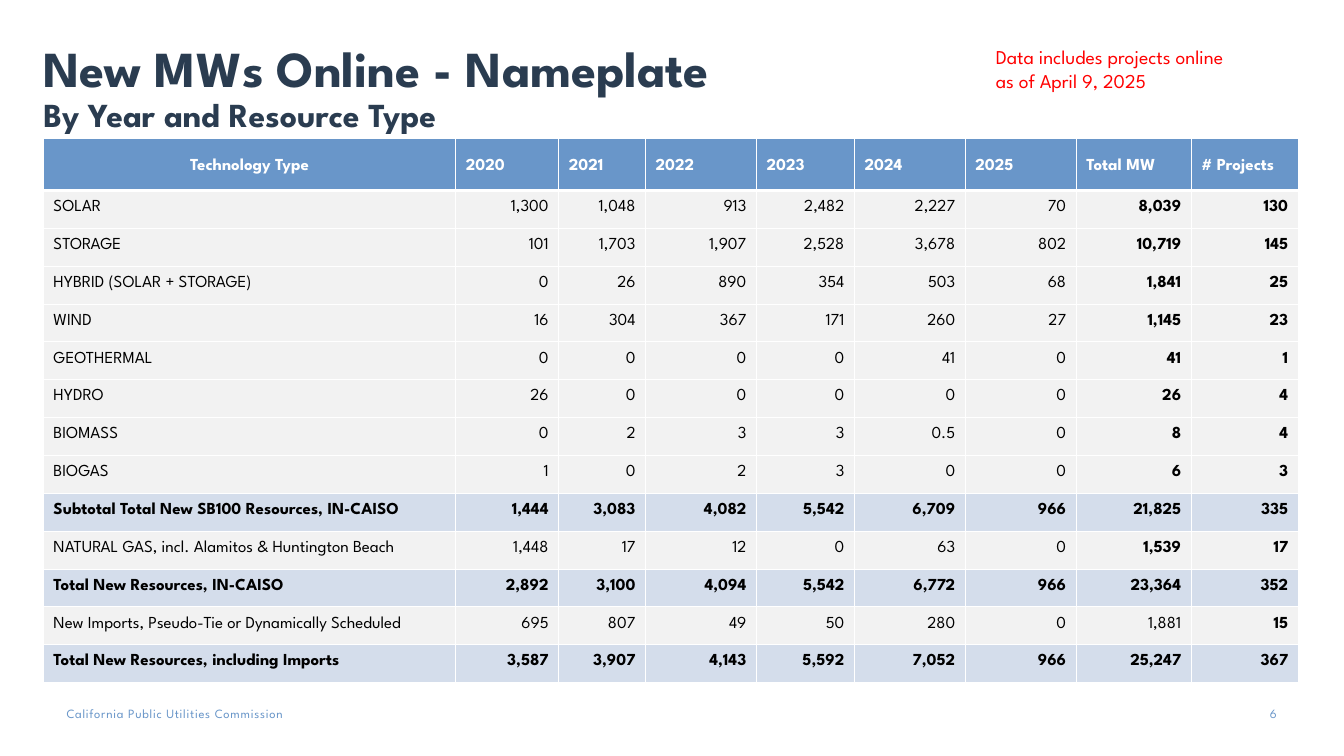
from dataclasses import dataclass

from lxml.etree import SubElement
from pptx import Presentation
from pptx.dml.color import RGBColor
from pptx.enum.text import MSO_ANCHOR, PP_ALIGN
from pptx.oxml.ns import qn
from pptx.util import Pt


@dataclass(frozen=True)
class Theme:
    font: str = "League Spartan"
    navy: str = "2A3C50"
    blue: str = "6996C9"
    pale_blue: str = "D4DDEB"
    grey: str = "F2F2F2"
    white: str = "FFFFFF"
    black: str = "000000"
    red: str = "FF0000"
    title: float = 36
    subtitle: float = 24
    note: float = 14
    table: float = 12
    footer: float = 9
    table_leading: float = 14.2
    thin: float = 0.75
    thick: float = 2.13


HEADER = ["Technology Type", "2020", "2021", "2022", "2023", "2024", "2025",
          "Total MW", "# Projects"]
RESOURCES = [
    ("SOLAR", "1,300 1,048 913 2,482 2,227 70 8,039 130"),
    ("STORAGE", "101 1,703 1,907 2,528 3,678 802 10,719 145"),
    ("HYBRID (SOLAR + STORAGE)", "0 26 890 354 503 68 1,841 25"),
    ("WIND", "16 304 367 171 260 27 1,145 23"),
    ("GEOTHERMAL", "0 0 0 0 41 0 41 1"),
    ("HYDRO", "26 0 0 0 0 0 26 4"),
    ("BIOMASS", "0 2 3 3 0.5 0 8 4"),
    ("BIOGAS", "1 0 2 3 0 0 6 3"),
    ("Subtotal Total New SB100 Resources, IN-CAISO",
     "1,444 3,083 4,082 5,542 6,709 966 21,825 335"),
    ("NATURAL GAS, incl. Alamitos & Huntington Beach",
     "1,448 17 12 0 63 0 1,539 17"),
    ("Total New Resources, IN-CAISO",
     "2,892 3,100 4,094 5,542 6,772 966 23,364 352"),
    ("New Imports, Pseudo-Tie or Dynamically Scheduled",
     "695 807 49 50 280 0 1,881 15"),
    ("Total New Resources, including Imports",
     "3,587 3,907 4,143 5,592 7,052 966 25,247 367"),
]
COLUMN_WIDTHS = [294.5, 73.6, 62.1, 79.2, 70, 79.2, 79.2, 82.2, 76.4]
HEADER_HEIGHT, ROW_HEIGHT = 36.8, 27.05
TOTAL_MW = HEADER.index("Total MW")


class SlideBuilder:
    def __init__(self, slide, theme):
        self.s = slide
        self.theme = theme

    def run(self, p, text, size, color, bold=False, spacing=0):
        """Add one styled run; spacing is letter spacing in points."""
        r = p.add_run()
        r.text = text
        r.font.name = self.theme.font
        r.font.size = Pt(size)
        r.font.bold = bold
        r.font.color.rgb = RGBColor.from_string(color)
        if spacing:
            r._r.get_or_add_rPr().set("spc", str(round(spacing * 100)))

    def text(self, box, lines, color, bold=False, spacing=0, align=PP_ALIGN.LEFT,
             anchor=MSO_ANCHOR.TOP, leading=1.0, inset=(0, 3.6, 7.2)):
        """Add a text box; lines holds (text, size) pairs parted by line breaks.

        inset is left, top and bottom, right.
        """
        sp = self.s.shapes.add_textbox(*map(Pt, box))
        tf = sp.text_frame
        tf.word_wrap = True
        tf.vertical_anchor = anchor
        tf.margin_left, tf.margin_top, tf.margin_right = map(Pt, inset)
        tf.margin_bottom = tf.margin_top
        p = tf.paragraphs[0]
        p.alignment = align
        p.line_spacing = leading
        for i, (line, size) in enumerate(lines):
            if i:
                p.add_line_break()
            self.run(p, line, size, color, bold, spacing)

    def borders(self, cell, top, bottom):
        tcPr = cell._tc.get_or_add_tcPr()
        thin = self.theme.thin
        for side, width in (("L", thin), ("R", thin), ("T", top), ("B", bottom)):
            ln = SubElement(tcPr, qn(f"a:ln{side}"), w=str(Pt(width)))
            fill = SubElement(ln, qn("a:solidFill"))
            SubElement(fill, qn("a:srgbClr"), val=self.theme.white)

    def cell(self, cell, text, fill, color, bold, align, anchor, top, bottom):
        self.borders(cell, top, bottom)
        cell.fill.solid()
        cell.fill.fore_color.rgb = RGBColor.from_string(fill)
        cell.vertical_anchor = anchor
        p = cell.text_frame.paragraphs[0]
        p.alignment = align
        p.line_spacing = Pt(self.theme.table_leading)
        self.run(p, text, self.theme.table, color, bold)

    def table(self, left, top):
        t = self.theme
        rows = [HEADER] + [[name, *values.split()] for name, values in RESOURCES]
        height = HEADER_HEIGHT + ROW_HEIGHT * len(RESOURCES)
        tbl = self.s.shapes.add_table(
            len(rows), len(HEADER), Pt(left), Pt(top),
            Pt(sum(COLUMN_WIDTHS)), Pt(height)).table
        tbl.horz_banding = False
        for column, width in zip(tbl.columns, COLUMN_WIDTHS):
            column.width = Pt(width)
        for i, row in enumerate(rows):
            tbl.rows[i].height = Pt(ROW_HEIGHT if i else HEADER_HEIGHT)
            is_header = i == 0
            is_total = "Total New" in row[0]
            is_import = row[0].startswith("New Imports")
            fill = t.blue if is_header else t.pale_blue if is_total else t.grey
            for j, text in enumerate(row):
                if is_header:
                    align = PP_ALIGN.LEFT if j else PP_ALIGN.CENTER
                else:
                    align = PP_ALIGN.RIGHT if j else PP_ALIGN.LEFT
                self.cell(
                    tbl.cell(i, j), text, fill,
                    color=t.white if is_header else t.black,
                    bold=is_header or is_total or j >= TOTAL_MW + is_import,
                    align=align,
                    anchor=MSO_ANCHOR.MIDDLE if is_header else MSO_ANCHOR.TOP,
                    top=t.thick if i == 1 else t.thin,
                    bottom=t.thick if is_header else t.thin)


def main():
    prs = Presentation()
    prs.slide_width, prs.slide_height = Pt(960), Pt(540)
    theme = Theme()
    s = SlideBuilder(prs.slides.add_slide(prs.slide_layouts[6]), theme)

    s.text((47.5, 504, 231, 11), [("California Public Utilities Commission", theme.footer)],
           theme.blue, spacing=0.5, inset=(0, 0, 0))
    s.text((31, -4.3, 864, 104.4),
           [("New MWs Online - Nameplate", theme.title),
            ("By Year and Resource Type", theme.subtitle)],
           theme.navy, bold=True, anchor=MSO_ANCHOR.BOTTOM, leading=0.9)
    s.text((882, 504, 30, 14.4), [("6", theme.footer)], theme.blue,
           align=PP_ALIGN.RIGHT, inset=(0, 0, 0))
    s.text((704.2, 28.8, 250, 63.4),
           [("Data includes projects online", theme.note),
            ("as of April 9, 2025", theme.note)], theme.red,
           inset=(7.2, 3.6, 7.2))
    s.table(31, 99.2)
    prs.save("out.pptx")


if __name__ == "__main__":
    main()
